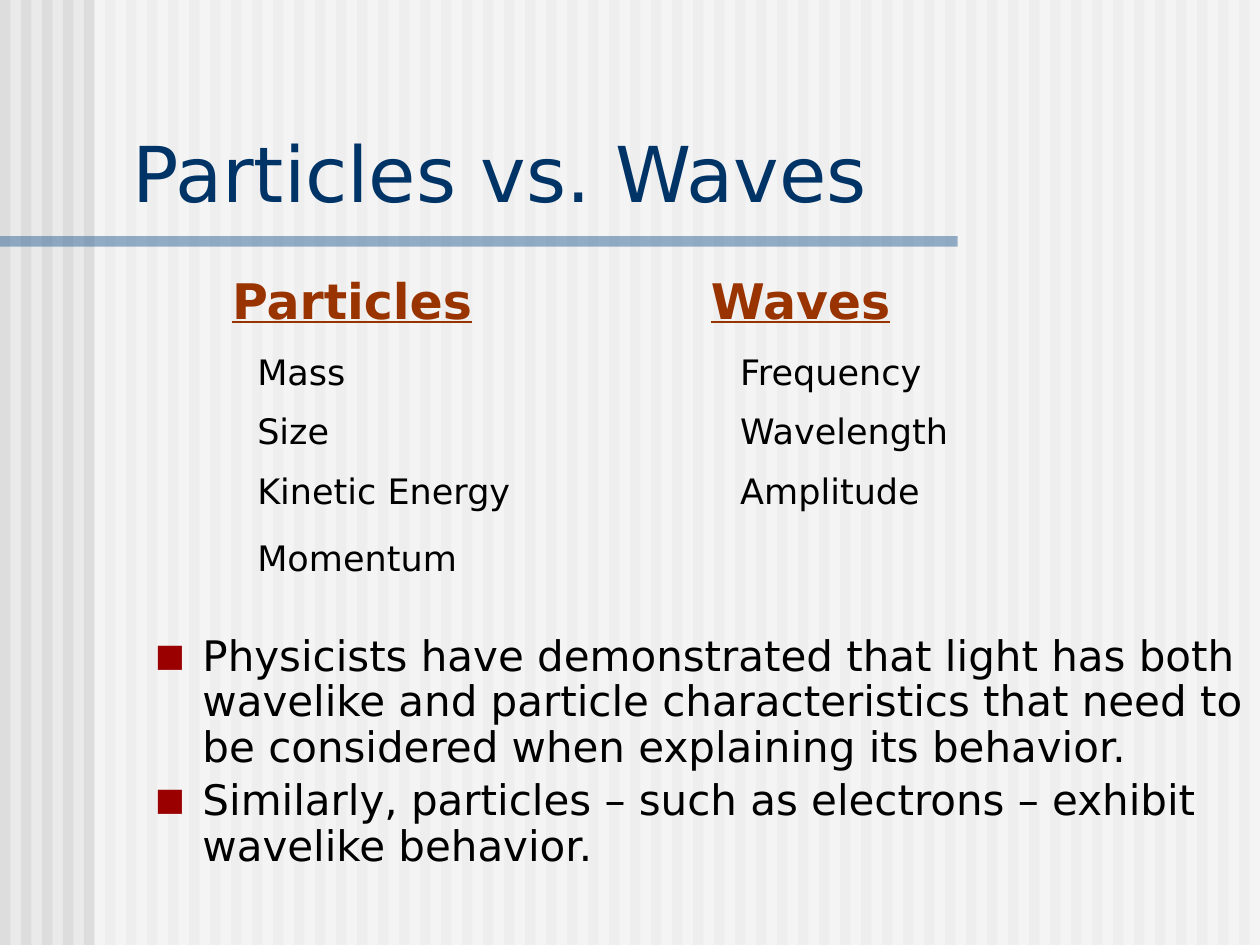
from dataclasses import dataclass

import pptx
import pptx.dml.color
import pptx.enum.shapes
import pptx.enum.text
import pptx.oxml
import pptx.oxml.ns
import pptx.util

COLUMNS, ROWS = 120, 90
NO_GRID_STYLE = "{2D5ABB26-0587-4C30-8999-92F81FD0307C}"


@dataclass(frozen=True)
class Theme:
    font: str = "DejaVu Sans"
    background: str = "EAEAEA"
    stripe: str = "DDDDDD"
    veil: str = "FFFFFF"
    rule: str = "336699"
    title: str = "003366"
    heading: str = "993300"
    text: str = "000000"
    bullet: str = "9A0000"
    title_size: int = 44
    heading_size: int = 28
    body_size: int = 24
    cell_size: int = 20
    paragraph_gap: float = 0.2
    body_spacing: float = 0.9


def color(value):
    return pptx.dml.color.RGBColor.from_string(value)


def drawing_element(tag, **attributes):
    element = pptx.oxml.parse_xml(f"<a:{tag} {pptx.oxml.ns.nsdecls('a')}/>")
    for name, value in attributes.items():
        element.set(name, str(value))
    return element


class SlideBuilder:
    """Draws on one slide, with places given in columns and rows of its grid."""

    def __init__(self, deck, theme):
        self.theme = theme
        self.column = deck.slide_width / COLUMNS
        self.row = deck.slide_height / ROWS
        self.slide = deck.slides.add_slide(deck.slide_layouts[6])
        fill = self.slide.background.fill
        fill.solid()
        fill.fore_color.rgb = color(theme.background)

    def across(self, columns):
        return pptx.util.Emu(round(columns * self.column))

    def down(self, rows):
        return pptx.util.Emu(round(rows * self.row))

    def place(self, left, top, width, height):
        return self.across(left), self.down(top), self.across(width), self.down(height)

    def bar(self, left, top, width, height, fill_color, opacity=None):
        shape = self.slide.shapes.add_shape(
            pptx.enum.shapes.MSO_SHAPE.RECTANGLE, *self.place(left, top, width, height))
        shape.shadow.inherit = False
        shape.line.fill.background()
        shape.fill.solid()
        shape.fill.fore_color.rgb = color(fill_color)
        if opacity is not None:
            tint = next(shape.fill._xPr.iter(pptx.oxml.ns.qn("a:srgbClr")))
            tint.append(drawing_element("alpha", val=opacity * 1000))

    def format(self, para, size, text_color, bold=False, underline=False):
        for span in para.runs:
            span.font.name = self.theme.font
            span.font.size = pptx.util.Pt(size)
            span.font.color.rgb = color(text_color)
            span.font.bold = bold
            span.font.underline = underline

    def text_box(self, *place):
        box = self.slide.shapes.add_textbox(*self.place(*place))
        box.text_frame.word_wrap = True
        return box.text_frame

    def title(self, text, *place):
        frame = self.text_box(*place)
        frame.vertical_anchor = pptx.enum.text.MSO_ANCHOR.BOTTOM
        frame.text = text
        self.format(frame.paragraphs[0], self.theme.title_size, self.theme.title)

    def bullets(self, items, indent, *place):
        frame = self.text_box(*place)
        frame.text = "\n".join(items)
        for para in frame.paragraphs:
            self.format(para, self.theme.body_size, self.theme.text)
            para.line_spacing = self.theme.body_spacing
            para.space_before = pptx.util.Pt(self.theme.body_size * self.theme.paragraph_gap)
            properties = para._p.get_or_add_pPr()
            properties.set("marL", str(self.across(indent)))
            properties.set("indent", str(-self.across(indent)))
            bullet_color = drawing_element("buClr")
            bullet_color.append(drawing_element("srgbClr", val=self.theme.bullet))
            properties.extend([
                bullet_color,
                drawing_element("buSzPct", val=75000),
                drawing_element("buFont", typeface=self.theme.font),
                drawing_element("buChar", char="■"),
            ])

    def table(self, lists, left, top, column_width, row_heights):
        """Fill each column from (heading, heading indent, items, item indent)."""
        grid = self.slide.shapes.add_table(
            len(row_heights), len(lists),
            *self.place(left, top, column_width * len(lists), sum(row_heights))).table
        grid.first_row = grid.horz_banding = False
        grid._tbl.tblPr.find(pptx.oxml.ns.qn("a:tableStyleId")).text = NO_GRID_STYLE
        for row, height in zip(grid.rows, row_heights):
            row.height = self.down(height)
        for cell in grid.iter_cells():
            cell.fill.background()
        for index, (heading, heading_indent, items, item_indent) in enumerate(lists):
            self.cell(grid.cell(0, index), heading, heading_indent,
                      self.theme.heading_size, self.theme.heading, True, True)
            for number, item in enumerate(items, start=1):
                self.cell(grid.cell(number, index), item, item_indent,
                          self.theme.cell_size, self.theme.text)

    def cell(self, cell, text, indent, size, *style):
        cell.text = text
        cell.vertical_anchor = pptx.enum.text.MSO_ANCHOR.MIDDLE
        cell.margin_left = cell.margin_left + self.across(indent)
        para = cell.text_frame.paragraphs[0]
        para.space_before = pptx.util.Pt(size * self.theme.paragraph_gap)
        self.format(para, size, *style)


def main():
    deck = pptx.Presentation()
    deck.slide_width = pptx.util.Inches(10)
    deck.slide_height = pptx.util.Inches(7.5)
    theme = Theme()
    page = SlideBuilder(deck, theme)

    for stripe_left in range(0, COLUMNS, 2):
        page.bar(stripe_left, 0, 1, ROWS, theme.stripe)
    page.bar(9, 0, COLUMNS - 9, ROWS, theme.veil, opacity=50)
    page.bar(0, 22.5, 91.2, 1, theme.rule, opacity=50)

    page.title("Particles vs. Waves", 11.4, 11.3, 107.2, 10)
    page.bullets([
        "Physicists have demonstrated that light has both wavelike and particle "
        "characteristics that need to be considered when explaining its behavior.",
        "Similarly, particles – such as electrons – exhibit wavelike behavior.",
    ], 4.5, 13.6, 59.9, 106.4, 26)
    page.table([
        ("Particles", 9.6, ["Mass", "Size", "Kinetic Energy", "Momentum"], 12),
        ("Waves", 3.2, ["Frequency", "Wavelength", "Amplitude"], 6),
    ], 11.3, 25.2, 52, [7.3, 6.1, 5.2, 6.1, 6.8])

    deck.save("out.pptx")


if __name__ == "__main__":
    main()
